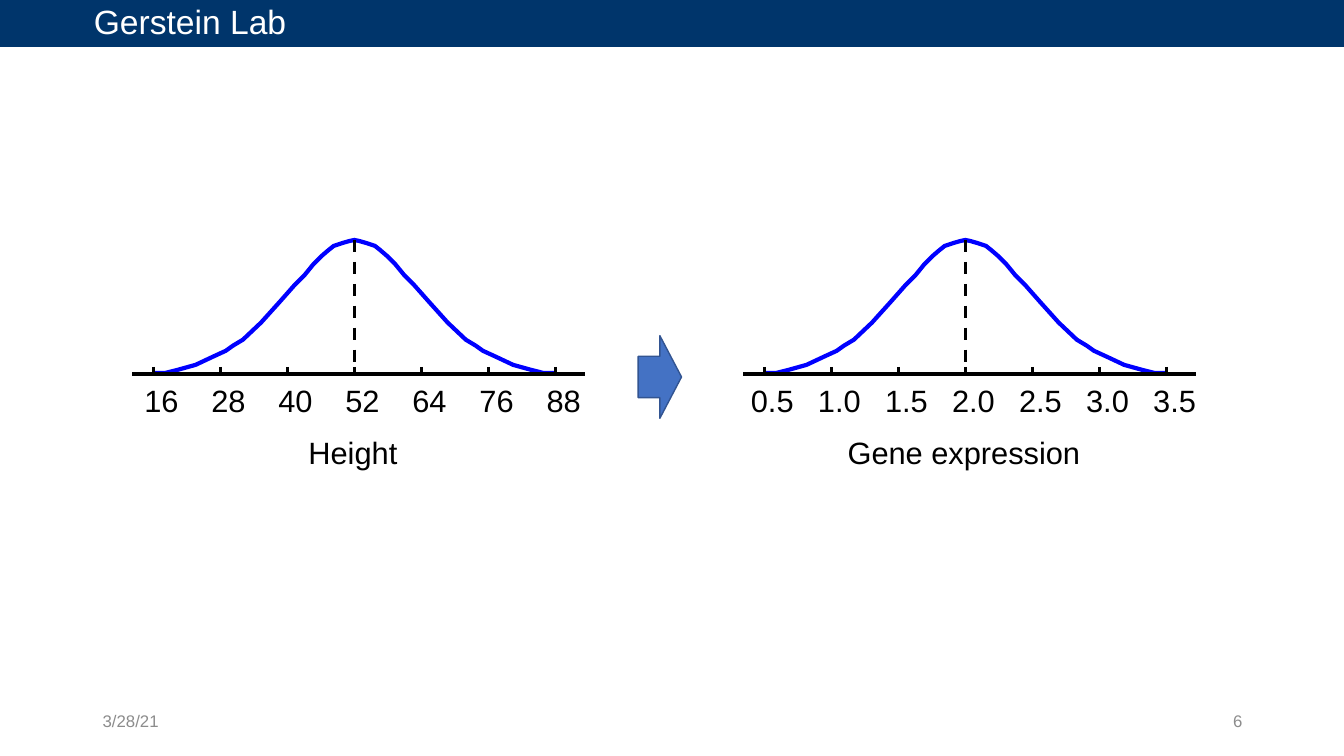
from lxml import etree
from pptx import Presentation
from pptx.dml.color import RGBColor
from pptx.enum.dml import MSO_LINE
from pptx.enum.shapes import MSO_CONNECTOR, MSO_SHAPE
from pptx.enum.text import MSO_ANCHOR, PP_ALIGN
from pptx.oxml.ns import qn
from pptx.util import Inches, Pt

LEFT, CENTER, RIGHT = PP_ALIGN.LEFT, PP_ALIGN.CENTER, PP_ALIGN.RIGHT
TOP, MIDDLE = MSO_ANCHOR.TOP, MSO_ANCHOR.MIDDLE
STRAIGHT, ARROW, DASH = MSO_CONNECTOR.STRAIGHT, MSO_SHAPE.RIGHT_ARROW, MSO_LINE.DASH
NO_TABLE_STYLE = "{2D5ABB26-0587-4C30-8999-92F81FD0307C}"

NAVY, BLUE, BLACK, WHITE, GREY = "00356B", "0000FF", "000000", "FFFFFF", "8C8C8C"
ARROW_FILL, ARROW_EDGE = "4472C4", "325491"

HEADER = "Gerstein Lab"
# caption, left foot of the curve, label width, caption width, tick labels
PLOTS = [
    ("Height", 1.52, 0.55, 1.09, ["16", "28", "40", "52", "64", "76", "88"]),
    ("Gene expression", 7.58, 0.63, 2.54,
     ["0.5", "1.0", "1.5", "2.0", "2.5", "3.0", "3.5"]),
]
# text, left, alignment
FOOTERS = [("3/28/21", 0.92, LEFT), ("6", 9.42, RIGHT)]

# rising half of the bell: distance from its foot, height above the foot
BELL = [(0, 0), (0.12, 0), (0.24, 0.03), (0.42, 0.08), (0.59, 0.16), (0.72, 0.22),
        (0.79, 0.27), (0.89, 0.33), (1.07, 0.5), (1.25, 0.7), (1.4, 0.87),
        (1.5, 0.97), (1.59, 1.08), (1.67, 1.16), (1.74, 1.22), (1.79, 1.26),
        (1.88, 1.29), (1.95, 1.31), (2, 1.32)]
SPAN, FOOT_Y, AXIS_Y, PEAK_Y = 3.99, 3.7, 3.71, 2.38
TICK_TOP, LABEL_Y, CAPTION_Y, TEXT_HEIGHT = 3.64, 3.74, 4.25, 0.47
LABEL_SHIFT, CAPTION_SHIFT, AXIS_OVERHANG = 0.08, 1.98, (0.21, 0.29)


def color(value):
    return RGBColor.from_string(value)


def style_line(line, value, width):
    line.color.rgb = color(value)
    line.width = Pt(width)


def fill_paragraph(paragraph, text, size, value, align):
    paragraph.alignment = align
    span = paragraph.add_run()
    span.text = text
    for name, setting in {"name": "Arial", "size": Pt(size)}.items():
        setattr(span.font, name, setting)
    span.font.color.rgb = color(value)


def add_text(shapes, text, left, top, width, height, size, value,
             align=CENTER, anchor=TOP, wrap=False):
    box = shapes.add_textbox(*map(Inches, (left, top, width, height)))
    for name, setting in {"word_wrap": wrap, "vertical_anchor": anchor}.items():
        setattr(box.text_frame, name, setting)
    fill_paragraph(box.text_frame.paragraphs[0], text, size, value, align)


def add_line(shapes, x1, y1, x2, y2):
    line = shapes.add_connector(STRAIGHT, *map(Inches, (x1, y1, x2, y2)))
    style_line(line.line, BLACK, 2.25)
    etree.SubElement(line._element.spPr, qn("a:effectLst"))
    return line


def add_half_bell(shapes, foot, direction):
    points = [(Inches(foot + direction * x), Inches(FOOT_Y - y)) for x, y in BELL]
    builder = shapes.build_freeform(*points[0])
    builder.add_line_segments(points[1:], close=False)
    curve = builder.convert_to_shape()
    curve.shadow.inherit = False
    curve.fill.background()
    style_line(curve.line, BLUE, 3)


def add_plot(page, caption, foot, label_width, caption_width, labels):
    shapes = page.shapes.add_group_shape().shapes
    end = foot + SPAN
    add_half_bell(shapes, foot, 1)
    add_half_bell(shapes, end, -1)
    add_line(shapes, foot - AXIS_OVERHANG[0], AXIS_Y, end + AXIS_OVERHANG[1], AXIS_Y)
    gap = SPAN / (len(labels) - 1)
    for index, label in enumerate(labels):
        x = foot + index * gap
        add_line(shapes, x, TICK_TOP, x, AXIS_Y)
        add_text(shapes, label, x + LABEL_SHIFT - label_width / 2, LABEL_Y,
                 label_width, TEXT_HEIGHT, 22, BLACK)
    add_text(shapes, caption, foot + CAPTION_SHIFT - caption_width / 2, CAPTION_Y,
             caption_width, TEXT_HEIGHT, 22, BLACK)
    middle = foot + BELL[-1][0]
    add_line(shapes, middle, PEAK_Y, middle, 3.66).line.dash_style = DASH


def add_header(page):
    frame = page.shapes.add_table(1, 3, 0, Inches(-0.01), Inches(13.33), Inches(0.46))
    table = frame.table
    table._tbl.tblPr.find(qn("a:tableStyleId")).text = NO_TABLE_STYLE
    for cell in table.iter_cells():
        cell.fill.solid()
        cell.fill.fore_color.rgb = color(NAVY)
    title = table.cell(0, 0)
    title.margin_left = Inches(0.93)
    fill_paragraph(title.text_frame.paragraphs[0], HEADER, 24, WHITE, LEFT)


def main():
    deck = Presentation()
    deck.slide_width, deck.slide_height = Inches(13.33), Inches(7.5)
    page = deck.slides.add_slide(deck.slide_layouts[6])
    add_header(page)
    for text, left, align in FOOTERS:
        add_text(page.shapes, text, left, 6.95, 3, 0.4, 12, GREY, align, MIDDLE, True)
    for plot in PLOTS:
        add_plot(page, *plot)
    arrow = page.shapes.add_shape(ARROW, *map(Inches, (6.33, 3.33, 0.43, 0.82)))
    arrow.shadow.inherit = False
    arrow.fill.solid()
    arrow.fill.fore_color.rgb = color(ARROW_FILL)
    style_line(arrow.line, ARROW_EDGE, 1)
    deck.save("out.pptx")


if __name__ == "__main__":
    main()
